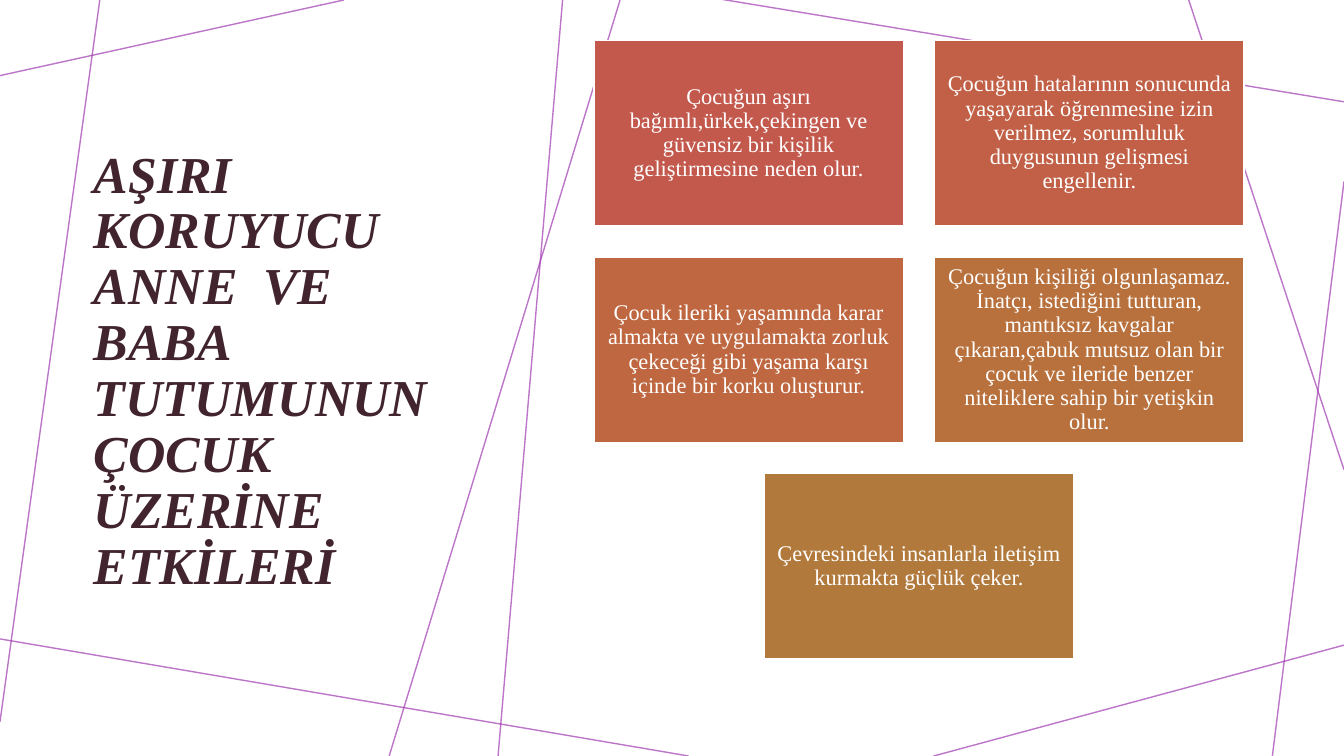
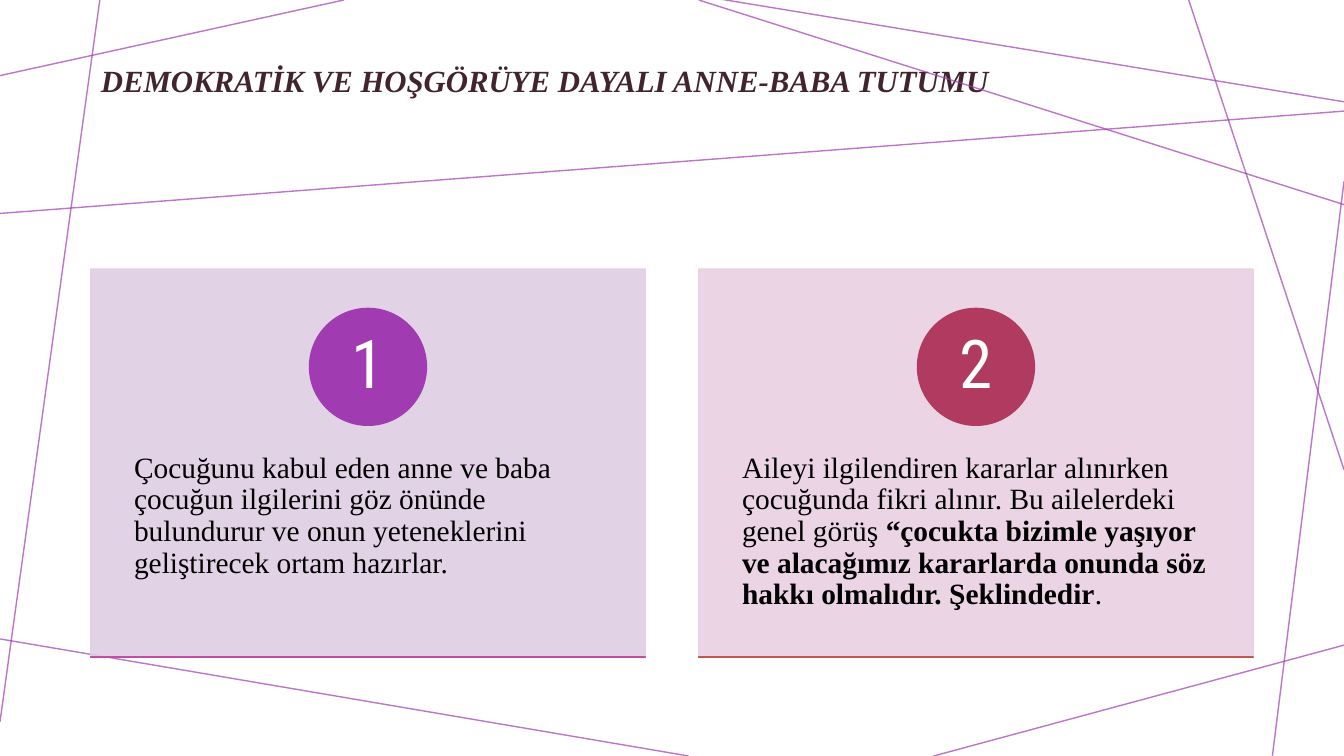
from pptx import Presentation
from pptx import util as u
from pptx.dml.color import RGBColor
from pptx.enum import shapes, text
from pptx.oxml import parse_xml
from pptx.oxml.ns import nsdecls, qn

WHITE = RGBColor(0xFF, 0xFF, 0xFF)
BLACK = RGBColor(0x00, 0x00, 0x00)
PLUM = RGBColor(0x41, 0x24, 0x2D)
VIOLET = RGBColor(0xA0, 0x3B, 0xB1)
CRIMSON = RGBColor(0xB1, 0x3B, 0x60)
MAGENTA = RGBColor(0xC3, 0x4D, 0xA3)
RED = RGBColor(0xC3, 0x59, 0x4D)
VERMILION = RGBColor(0xC1, 0x60, 0x46)
RUST = RGBColor(0xBE, 0x67, 0x40)
COPPER = RGBColor(0xB8, 0x71, 0x3D)
OCHRE = RGBColor(0xB1, 0x79, 0x3B)
LILAC = RGBColor(0xDF, 0xCE, 0xE4)
ROSE = RGBColor(0xE9, 0xD0, 0xE0)

SERIF = "Times New Roman"
TITLE_FONT = {"name": SERIF, "bold": True, "italic": True}
SIDES = ("margin_left", "margin_top", "margin_right", "margin_bottom")

MASTER_LINES = [
    (3.41, 0, 0, 0.75),
    (0.99, 0, 0, 7.16),
    (6.83, 7.5, -0.05, 6.33),
    (13.33, 6.4, 9.26, 7.5),
    (13.33, 1.8, 12.62, 7.5),
    (13.33, 4.66, 11.79, 0),
    (13.33, 1.01, 7.14, -0.01),
]

EFFECTS = [
    (0, 0, RED, "Çocuğun aşırı bağımlı,ürkek,çekingen ve güvensiz bir kişilik "
                "geliştirmesine neden olur."),
    (1, 0, VERMILION, "Çocuğun hatalarının sonucunda yaşayarak öğrenmesine izin verilmez, "
                      "sorumluluk duygusunun gelişmesi engellenir."),
    (0, 1, RUST, "Çocuk ileriki yaşamında karar almakta ve uygulamakta zorluk çekeceği "
                 "gibi yaşama karşı içinde bir korku oluşturur."),
    (1, 1, COPPER, "Çocuğun kişiliği olgunlaşamaz. İnatçı, istediğini tutturan, mantıksız "
                   "kavgalar çıkaran,çabuk mutsuz olan bir çocuk ve ileride benzer "
                   "niteliklere sahip bir yetişkin olur."),
    (0.5, 2, OCHRE, "Çevresindeki insanlarla iletişim kurmakta güçlük çeker."),
]

PRINCIPLES = [
    (LILAC, VIOLET, MAGENTA, [
        ("Çocuğunu kabul eden anne ve baba çocuğun ilgilerini göz önünde bulundurur "
         "ve onun yeteneklerini geliştirecek ortam hazırlar.", False)]),
    (ROSE, CRIMSON, RED, [
        ("Aileyi ilgilendiren kararlar alınırken çocuğunda fikri alınır. "
         "Bu ailelerdeki genel görüş ", False),
        ("“çocukta bizimle yaşıyor ve alacağımız kararlarda onunda söz hakkı "
         "olmalıdır. Şeklindedir", True),
        (".", False)]),
]


def set_alpha(shape, percent):
    """Make every plain colour of a shape partly transparent."""
    for colour in shape.element.spPr.iter(qn("a:srgbClr")):
        colour.append(parse_xml(f'<a:alpha {nsdecls("a")} val="{percent * 1000}"/>'))


def write(shape, runs, size, colour, align, anchor, margins, **font):
    """Write one formatted paragraph of (wording, bold) runs in a shape."""
    frame = shape.text_frame
    layout = {"word_wrap": True, "auto_size": text.MSO_AUTO_SIZE.NONE,
              "vertical_anchor": anchor}
    layout.update(zip(SIDES, map(u.Inches, margins)))
    for key, value in layout.items():
        setattr(frame, key, value)
    para = frame.paragraphs[0]
    para.alignment = align
    para.line_spacing = 0.9
    for wording, bold in runs:
        span = para.add_run()
        span.text = wording
        for key, value in {"name": SERIF, "size": u.Pt(size), "bold": bold, **font}.items():
            setattr(span.font, key, value)
        span.font.color.rgb = colour


def add_box(page, kind, place, fill, outline):
    """Add a flat preset shape with a one-point outline."""
    box = page.shapes.add_shape(kind, *map(u.Inches, place))
    box.shadow.inherit = False
    box.fill.solid()
    box.fill.fore_color.rgb = fill
    box.line.color.rgb = outline
    box.line.width = u.Pt(1)
    return box


def add_line(page, ends):
    """Add a translucent violet line."""
    line = page.shapes.add_connector(shapes.MSO_CONNECTOR.STRAIGHT, *map(u.Inches, ends))
    line.line.color.rgb = VIOLET
    line.line.width = u.Pt(1)
    line.element.spPr.append(parse_xml(f'<a:effectLst {nsdecls("a")}/>'))
    set_alpha(line, 70)
    return line


def decorate_master(deck, page):
    """Draw the shared lines and move them behind the master's placeholders."""
    tree = deck.slide_master.shapes.element
    for index, ends in enumerate(MASTER_LINES):
        element = add_line(page, ends).element
        element.nvCxnSpPr.cNvPr.id = 100 + index
        tree.insert(2 + index, element)


def add_page(deck, title, place, size, bottom, lines):
    """Add a page with its title and its own lines."""
    page = deck.slides.add_slide(deck.slide_layouts[5])
    heading = page.shapes.title
    for key, value in zip(("left", "top", "width", "height"), place):
        setattr(heading, key, u.Inches(value))
    write(heading, [(title, True)], size, PLUM, text.PP_ALIGN.LEFT,
          text.MSO_ANCHOR.MIDDLE, (0.1, 0.05, 0.1, bottom), **TITLE_FONT)
    for ends in lines:
        add_line(page, ends)
    return page


def add_effect(page, column, row, colour, wording):
    """Add one coloured box of the effects grid."""
    place = (5.89 + 3.38 * column, 0.4 + 2.15 * row, 3.07, 1.84)
    box = add_box(page, shapes.MSO_SHAPE.RECTANGLE, place, colour, WHITE)
    write(box, [(wording, False)], 16, WHITE, text.PP_ALIGN.CENTER,
          text.MSO_ANCHOR.MIDDLE, (0.07,) * 4)


def add_principle(page, index, panel_colour, badge_colour, edge_colour, runs):
    """Add one numbered panel with its badge and bottom edge."""
    left, top, width, height, badge = 0.9 + 6.03 * index, 2.67, 5.5, 3.85, 1.16
    panel = add_box(page, shapes.MSO_SHAPE.RECTANGLE, (left, top, width, height),
                    panel_colour, panel_colour)
    set_alpha(panel, 90)
    write(panel, runs, 21, BLACK, text.PP_ALIGN.LEFT, text.MSO_ANCHOR.TOP,
          (0.43, 1.82, 0.43, 0.36))
    circle = add_box(page, shapes.MSO_SHAPE.OVAL,
                     (left + (width - badge) / 2, 3.06, badge, badge),
                     badge_colour, badge_colour)
    write(circle, [(str(index + 1), False)], 48, WHITE, text.PP_ALIGN.CENTER,
          text.MSO_ANCHOR.MIDDLE, (0, 0, 0, 0), name="Roboto Condensed")
    add_box(page, shapes.MSO_SHAPE.RECTANGLE, (left, top + height, width, 0),
            edge_colour, edge_colour)


def main():
    """Build and save the deck."""
    deck = Presentation()
    deck.slide_width, deck.slide_height = u.Inches(13.33), u.Inches(7.5)

    page = add_page(
        deck, "AŞIRI  KORUYUCU ANNE  VE  BABA  TUTUMUNUN  ÇOCUK  ÜZERİNE ETKİLERİ",
        (0.83, 0.99, 4.07, 5.4), 37, 0.05,
        [(6.15, 0, 3.86, 7.5), (5.58, 0, 4.94, 7.5)])
    decorate_master(deck, page)
    for effect in EFFECTS:
        add_effect(page, *effect)

    page = add_page(
        deck, "DEMOKRATİK VE HOŞGÖRÜYE DAYALI ANNE-BABA TUTUMU",
        (0.9, 0.46, 9.03, 1.1), 22, 0.43,
        [(6.93, 0, 13.33, 2.03), (-0.03, 2.12, 13.36, 1.1)])
    for index, principle in enumerate(PRINCIPLES):
        add_principle(page, index, *principle)

    deck.save("out.pptx")


if __name__ == "__main__":
    main()
